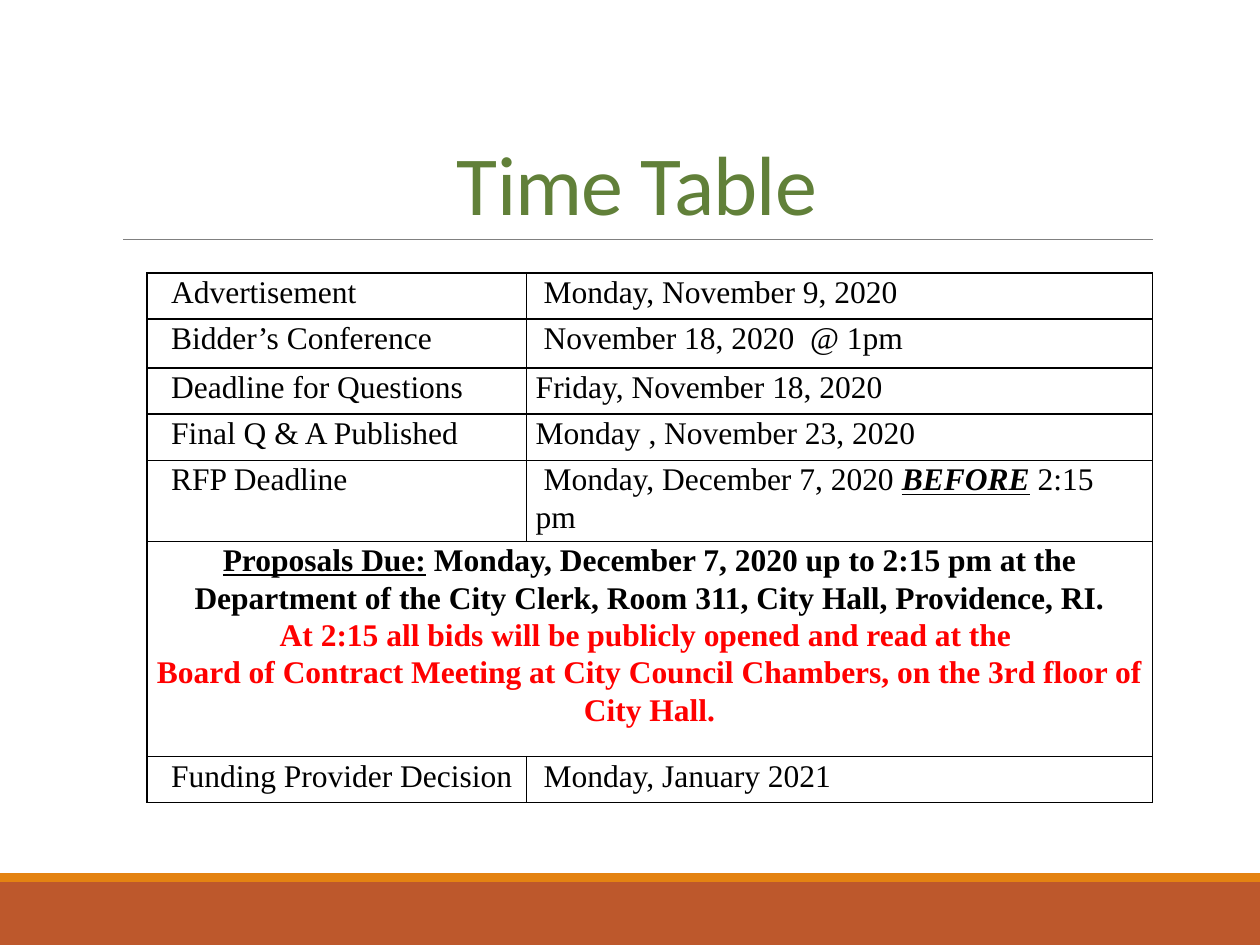
from lxml.etree import SubElement
from pptx import Presentation
from pptx.dml.color import RGBColor
from pptx.enum.shapes import MSO_CONNECTOR, MSO_SHAPE
from pptx.enum.text import MSO_ANCHOR, PP_ALIGN
from pptx.oxml.ns import qn
from pptx.util import Cm, Pt

COLORS = {
    "footer": "BD582C",
    "stripe": "E48312",
    "rule": "808080",
    "title": "618039",
    "text": "000000",
    "alert": "FF0000",
}
TITLE_FONT = {"name": "Calibri", "size": Pt(48)}
BODY_FONT = {"name": "Times New Roman", "size": Pt(18)}
BOLD = {"bold": True}
HEADING = {"bold": True, "underline": True}
EMPHASIS = {"bold": True, "italic": True, "underline": True}
CELL_MARGINS = {
    "margin_left": Cm(0.19),
    "margin_right": Cm(0.19),
    "margin_top": 0,
    "margin_bottom": 0,
}
DATE_MARGINS = {"margin_right": Cm(0.3)}
LABEL_INDENT = Cm(0.3)
COLUMN_WIDTHS = [7.65, 12.62]
ROW_HEIGHT = 0.93
ROW_HEIGHTS = {1: 0.99, 5: 4.34}

SCHEDULE = [
    ("Advertisement", [(" Monday, November 9, 2020", {})]),
    ("Bidder’s Conference", [(" November 18, 2020  @ 1pm", {})]),
    ("Deadline for Questions", [("Friday, November 18, 2020", {})]),
    ("Final Q & A Published", [("Monday , November 23, 2020", {})]),
    ("RFP Deadline", [(" Monday, December 7, 2020 ", {}), ("BEFORE", EMPHASIS), (" 2:15 pm", {})]),
    None,
    ("Funding Provider Decision", [(" Monday, January 2021", {})]),
]
NOTICE = [
    ("text", [("Proposals Due:", HEADING), (" Monday, December 7, 2020 up to 2:15 pm at the", BOLD)]),
    ("text", [("Department of the City Clerk, Room 311, City Hall, Providence, RI.", BOLD)]),
    ("alert", [("At 2:15 all bids will be publicly opened and read at the ", BOLD)]),
    ("alert", [("Board of Contract Meeting at City Council Chambers, on the 3rd floor of City Hall.", BOLD)]),
]


def color(name):
    """Return the named colour."""
    return RGBColor.from_string(COLORS[name])


def apply_format(target, values):
    """Set each attribute in values on the target."""
    for name, value in values.items():
        setattr(target, name, value)


def add_band(slide, top, height, fill):
    """Add a full-width coloured band."""
    shape = slide.shapes.add_shape(MSO_SHAPE.RECTANGLE, 0, Cm(top), Cm(25.4), Cm(height))
    shape.shadow.inherit = False
    shape.fill.solid()
    shape.fill.fore_color.rgb = color(fill)
    shape.line.fill.background()


def add_rule(slide, left, right, top):
    """Add the thin line under the title."""
    connector = slide.shapes.add_connector(MSO_CONNECTOR.STRAIGHT, Cm(left), Cm(top), Cm(right), Cm(top))
    connector.line.color.rgb = color("rule")
    connector.line.width = Pt(0.5)
    SubElement(connector._element.spPr, qn("a:effectLst"))


def write_paragraph(paragraph, runs, font, ink, alignment=PP_ALIGN.LEFT, spacing=1.07, indent=0):
    """Fill a paragraph with formatted runs."""
    apply_format(paragraph, {"alignment": alignment, "line_spacing": spacing})
    paragraph._p.get_or_add_pPr().set("marL", str(int(indent)))
    for text, style in runs:
        run = paragraph.add_run()
        run.text = text
        apply_format(run.font, {**font, **style})
        run.font.color.rgb = color(ink)


def add_title(slide, text):
    """Add the slide title, resting on the rule."""
    frame = slide.shapes.add_textbox(Cm(2.29), Cm(0.77), Cm(20.95), Cm(4.04)).text_frame
    apply_format(frame, {"word_wrap": True, "vertical_anchor": MSO_ANCHOR.BOTTOM})
    paragraph = frame.paragraphs[0]
    write_paragraph(paragraph, [(text, {})], TITLE_FONT, "title", PP_ALIGN.CENTER, 0.85, Cm(0.15))
    paragraph.runs[0].font._element.set("spc", "-50")


def format_cell(cell):
    """Give a cell its margins, black borders and no fill."""
    apply_format(cell, CELL_MARGINS)
    properties = cell._tc.get_or_add_tcPr()
    for side in ("lnL", "lnR", "lnT", "lnB"):
        line = SubElement(properties, qn(f"a:{side}"), w=str(int(Pt(1))))
        fill = SubElement(line, qn("a:solidFill"))
        SubElement(fill, qn("a:srgbClr"), val=COLORS["text"])
    cell.fill.background()


def write_notice(table, row):
    """Merge a row and write the proposal notice in it."""
    cell = table.cell(row, 0)
    cell.merge(table.cell(row, 1))
    frame = cell.text_frame
    for index, (ink, runs) in enumerate(NOTICE):
        paragraph = frame.add_paragraph() if index else frame.paragraphs[0]
        write_paragraph(paragraph, runs, BODY_FONT, ink, PP_ALIGN.CENTER)


def add_schedule(slide):
    """Add the table of dates."""
    heights = [ROW_HEIGHTS.get(row, ROW_HEIGHT) for row in range(len(SCHEDULE))]
    table = slide.shapes.add_table(
        len(heights), len(COLUMN_WIDTHS), Cm(2.96), Cm(5.5), Cm(sum(COLUMN_WIDTHS)), Cm(sum(heights))
    ).table
    apply_format(table, {"first_row": False, "horz_banding": False})
    for column, width in zip(table.columns, COLUMN_WIDTHS):
        column.width = Cm(width)
    for row, height in zip(table.rows, heights):
        row.height = Cm(height)
    for cell in table.iter_cells():
        format_cell(cell)
    for row, entry in enumerate(SCHEDULE):
        if entry is None:
            write_notice(table, row)
            continue
        label, date_runs = entry
        label_cell, date_cell = table.cell(row, 0), table.cell(row, 1)
        apply_format(date_cell, DATE_MARGINS)
        write_paragraph(label_cell.text_frame.paragraphs[0], [(label, {})], BODY_FONT, "text", indent=LABEL_INDENT)
        write_paragraph(date_cell.text_frame.paragraphs[0], date_runs, BODY_FONT, "text")


def main():
    """Build and save the slide."""
    presentation = Presentation()
    apply_format(presentation, {"slide_width": Cm(25.4), "slide_height": Cm(19.05)})
    slide = presentation.slides.add_slide(presentation.slide_layouts[6])
    add_band(slide, 17.78, 1.27, "footer")
    add_band(slide, 17.6, 0.18, "stripe")
    add_rule(slide, 2.48, 23.24, 4.83)
    add_title(slide, "Time Table")
    add_schedule(slide)
    presentation.save("out.pptx")


if __name__ == "__main__":
    main()
